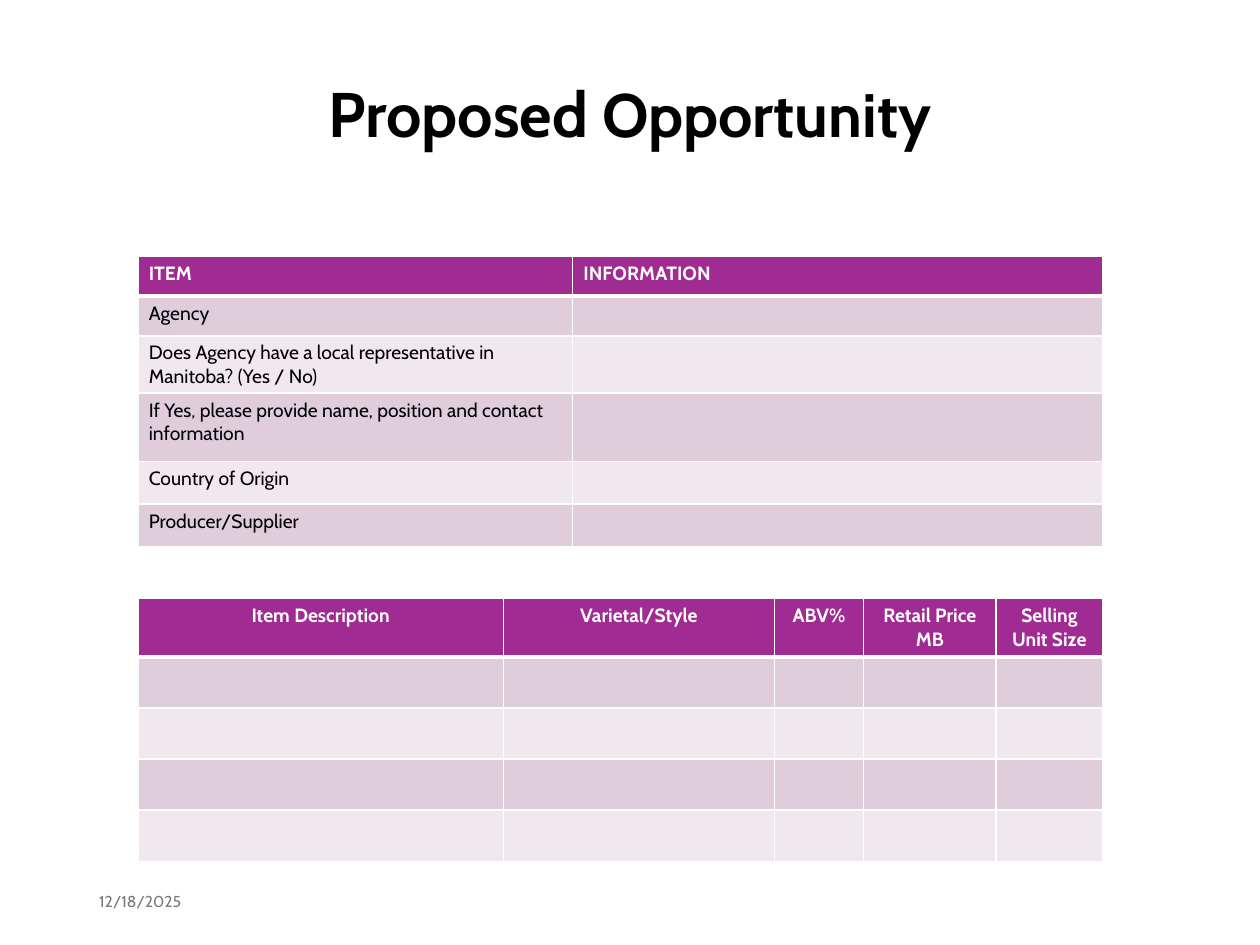
from dataclasses import dataclass

import lxml.etree
import pptx
import pptx.dml.color
import pptx.enum.shapes
import pptx.enum.text
import pptx.oxml.ns
import pptx.util

Cm = pptx.util.Cm
Pt = pptx.util.Pt
ALIGN = pptx.enum.text.PP_ALIGN
MIDDLE = pptx.enum.text.MSO_ANCHOR.MIDDLE
qn = pptx.oxml.ns.qn


@dataclass(frozen=True)
class Theme:
    font: str = "Cabin"
    white: str = "FFFFFF"
    black: str = "000000"
    grey: str = "797979"
    head: str = "A02B93"
    bands: tuple = ("DFCDDC", "F0E8EE")
    title: tuple = (36, 35)
    body: int = 11
    small: int = 9
    thin: int = 1
    thick: int = 3


THEME = Theme()


def rgb(code):
    return pptx.dml.color.RGBColor.from_string(code)


def style(para, size, color, bold=False, align=ALIGN.LEFT):
    font = para.font
    font.name, font.bold = THEME.font, bold
    font.color.rgb = rgb(color)
    if size:
        font.size = Pt(size)
    para.alignment = align


def add_text(slide, box):
    """Add a wrapped, vertically centred text box and return its paragraph."""
    left, top, width, height = box
    frame = slide.shapes.add_textbox(Cm(left), Cm(top), Cm(width), Cm(height)).text_frame
    frame.word_wrap = True
    frame.vertical_anchor = MIDDLE
    return frame.paragraphs[0]


def add_edge(cell, side, width):
    props = cell._tc.get_or_add_tcPr()
    line = lxml.etree.SubElement(props, qn("a:ln" + side), w=str(Pt(width)))
    fill = lxml.etree.SubElement(line, qn("a:solidFill"))
    lxml.etree.SubElement(fill, qn("a:srgbClr"), val=THEME.white)


def fill_cell(cell, text, row, align, inset):
    head = row == 0
    # Edges come before the fill in the cell properties
    for side in "LRTB":
        rule = (row, side) in ((0, "B"), (1, "T"))
        add_edge(cell, side, THEME.thick if rule else THEME.thin)
    cell.fill.solid()
    cell.fill.fore_color.rgb = rgb(THEME.head if head else THEME.bands[(row - 1) % 2])
    cell.margin_left = cell.margin_right = Cm(inset[0])
    cell.margin_top = cell.margin_bottom = Cm(inset[1])
    cell.text = text
    para = cell.text_frame.paragraphs[0]
    style(para, THEME.body, THEME.white if head else THEME.black, head, align)
    if not text:
        # Keeps empty rows as low as the filled ones
        lxml.etree.SubElement(para._p, qn("a:endParaRPr"), sz=str(THEME.body * 100))


def add_grid(slide, box, cols, rows, data, align, inset):
    left, top, width, height = box
    table = slide.shapes.add_table(
        len(rows), len(cols), Cm(left), Cm(top), Cm(width), Cm(height)).table
    for col, size in zip(table.columns, cols):
        col.width = Cm(size)
    for row, size in zip(table.rows, rows):
        row.height = Cm(size)
    for i in range(len(rows)):
        for j in range(len(cols)):
            text = data[i][j] if i < len(data) and j < len(data[i]) else ""
            fill_cell(table.cell(i, j), text, i, align, inset)


def add_title(slide, box):
    left, top, width, height = box
    # White band behind the heading
    band = slide.shapes.add_shape(
        pptx.enum.shapes.MSO_SHAPE.RECTANGLE, Cm(left), Cm(top), Cm(width), Cm(height))
    band.shadow.inherit = False
    band.fill.solid()
    band.fill.fore_color.rgb = rgb(THEME.white)
    band.line.fill.background()
    # Heading
    para = add_text(slide, (left + 2.38, top + 0.76, width - 4.76, height - 1.5))
    style(para, None, THEME.black, True, ALIGN.CENTER)
    para.line_spacing = 0.9
    for word, size in zip(("Proposed", " Opportunity"), THEME.title):
        run = para.add_run()
        run.text = word
        run.font.size = Pt(size)


def add_info(slide, box):
    data = [
        ("ITEM", "INFORMATION"),
        ("Agency",),
        ("Does Agency have a local representative in Manitoba? (Yes / No)",),
        ("If Yes, please provide name, position and contact information",),
        ("Country of Origin",),
        ("Producer/Supplier",),
    ]
    add_grid(slide, box, (8.76, 10.69), (0.8, 0.8, 1.15, 1.38, 0.86, 0.86),
             data, ALIGN.LEFT, (0.22, 0.11))


def add_items(slide, box):
    heads = ("Item Description", "Varietal/Style", "ABV%",
             "Retail Price MB", "Selling Unit Size")
    add_grid(slide, box, (7.37, 5.46, 1.8, 2.67, 2.15), (1.18,) + (1.03,) * 4,
             [heads], ALIGN.CENTER, (0.25, 0.13))


def add_date(slide, box):
    para = add_text(slide, box)
    para.text = "12/18/2025"
    style(para, THEME.small, THEME.grey)


def main():
    deck = pptx.Presentation()
    deck.slide_width, deck.slide_height = Cm(25.4), Cm(19.05)
    slide = deck.slides.add_slide(deck.slide_layouts[6])
    add_title(slide, (0, 0, 25.4, 4.72))
    add_info(slide, (2.78, 5.17, 19.45, 5.85))
    add_items(slide, (2.78, 12.05, 19.45, 5.3))
    add_date(slide, (1.75, 17.66, 5.72, 1.02))
    deck.save("out.pptx")


if __name__ == "__main__":
    main()
